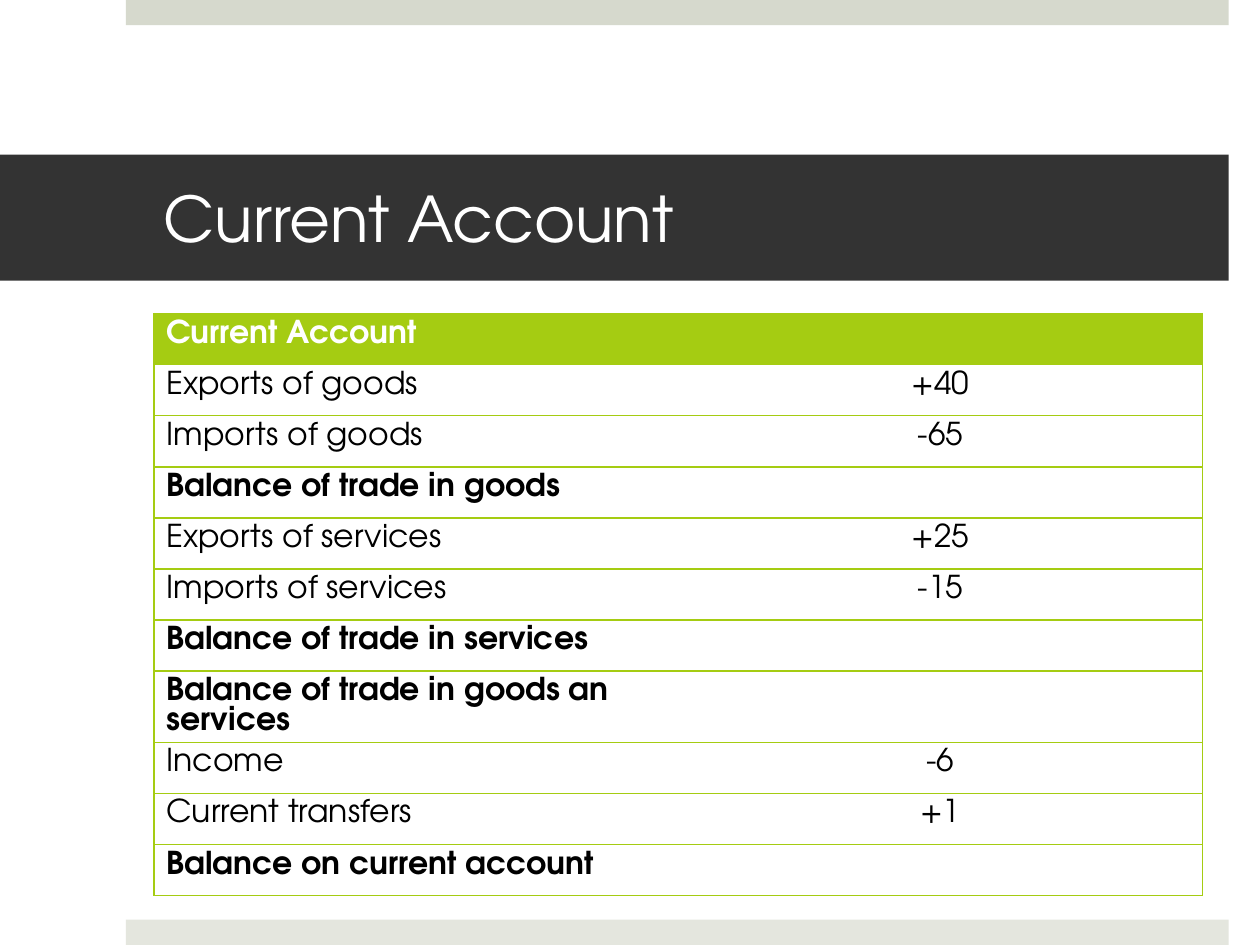
import dataclasses

import lxml.etree
import pptx
import pptx.dml.color
import pptx.enum.shapes
import pptx.enum.text
import pptx.oxml.ns
import pptx.util

Cm = pptx.util.Cm
Pt = pptx.util.Pt
RGBColor = pptx.dml.color.RGBColor
Align = pptx.enum.text.PP_ALIGN

FONT = "TeX Gyre Adventor"
WHITE = RGBColor(0xFF, 0xFF, 0xFF)
BLACK = RGBColor(0x00, 0x00, 0x00)
CHARCOAL = RGBColor(0x33, 0x33, 0x33)
SAGE = RGBColor(0xD6, 0xD9, 0xCD)
PALE_SAGE = RGBColor(0xE4, 0xE6, 0xDE)
LIME = RGBColor(0xA5, 0xCC, 0x12)


@dataclasses.dataclass(frozen=True)
class Band:
    left: float
    top: float
    width: float
    height: float
    color: RGBColor


@dataclasses.dataclass(frozen=True)
class Entry:
    label: str
    amount: str = ""

    @property
    def bold(self) -> bool:
        return not self.amount


TOP_BAND = Band(2.54, 0, 22.23, 0.51, SAGE)
BOTTOM_BAND = Band(2.54, 18.54, 22.23, 0.51, PALE_SAGE)
TITLE_BAND = Band(0, 3.12, 24.77, 2.54, CHARCOAL)

ENTRIES = [
    Entry("Current Account"),
    Entry("Exports of goods", "+40"),
    Entry("Imports of goods", "-65"),
    Entry("Balance of trade in goods"),
    Entry("Exports of services", "+25"),
    Entry("Imports of services", "-15"),
    Entry("Balance of trade in services"),
    Entry("Balance of trade in goods an services"),
    Entry("Income", "-6"),
    Entry("Current transfers", "+1"),
    Entry("Balance on current account"),
]
COLUMN_WIDTH = 10.57
ROW_HEIGHT = 1.03


def apply_format(target, values: dict) -> None:
    for name, value in values.items():
        setattr(target, name, value)


def write_text(frame, text: str, size: int, color: RGBColor, bold: bool, align) -> None:
    para = frame.paragraphs[0]
    para.alignment = align
    span = para.add_run()
    span.text = text
    apply_format(span.font, {"name": FONT, "size": Pt(size), "bold": bold})
    span.font.color.rgb = color


def draw_band(page, band: Band):
    box = page.shapes.add_shape(
        pptx.enum.shapes.MSO_SHAPE.RECTANGLE,
        Cm(band.left), Cm(band.top), Cm(band.width), Cm(band.height))
    box.shadow.inherit = False
    box.fill.solid()
    box.fill.fore_color.rgb = band.color
    box.line.fill.background()
    return box


def draw_borders(cell, visible: dict) -> None:
    properties = cell._tc.get_or_add_tcPr()
    qn = pptx.oxml.ns.qn
    for side, shown in visible.items():
        line = lxml.etree.SubElement(properties, qn(f"a:ln{side}"), w=str(Pt(1)))
        if shown:
            fill = lxml.etree.SubElement(line, qn("a:solidFill"))
            lxml.etree.SubElement(fill, qn("a:srgbClr"), val=str(LIME))
        else:
            lxml.etree.SubElement(line, qn("a:noFill"))


def draw_account_table(page, entries: list[Entry]) -> None:
    table = page.shapes.add_table(
        len(entries), 2, Cm(3.1), Cm(6.32),
        Cm(2 * COLUMN_WIDTH), Cm(ROW_HEIGHT * len(entries))).table
    table.horz_banding = False
    for column in table.columns:
        column.width = Cm(COLUMN_WIDTH)
    for index, entry in enumerate(entries):
        header = index == 0
        table.rows[index].height = Cm(ROW_HEIGHT)
        for side, text in enumerate((entry.label, entry.amount)):
            cell = table.cell(index, side)
            draw_borders(cell, {"L": side == 0, "R": side == 1, "T": True, "B": True})
            if header:
                cell.fill.solid()
                cell.fill.fore_color.rgb = LIME
            else:
                cell.fill.background()
            if text:
                write_text(cell.text_frame, text, 18, WHITE if header else BLACK,
                           entry.bold, Align.CENTER if side else Align.LEFT)


def main() -> None:
    deck = pptx.Presentation()
    apply_format(deck, {"slide_width": Cm(25.4), "slide_height": Cm(19.05)})
    page = deck.slides.add_slide(deck.slide_layouts[6])

    # Edge bands
    for band in (TOP_BAND, BOTTOM_BAND):
        draw_band(page, band)

    # Title
    frame = draw_band(page, TITLE_BAND).text_frame
    apply_format(frame, {
        "word_wrap": True,
        "vertical_anchor": pptx.enum.text.MSO_ANCHOR.MIDDLE,
        "margin_left": Cm(3.3), "margin_right": Cm(0.76),
        "margin_top": Cm(0.13), "margin_bottom": Cm(0.13),
    })
    write_text(frame, "Current Account", 36, WHITE, False, Align.LEFT)

    # Account table
    draw_account_table(page, ENTRIES)

    deck.save("out.pptx")


if __name__ == "__main__":
    main()
